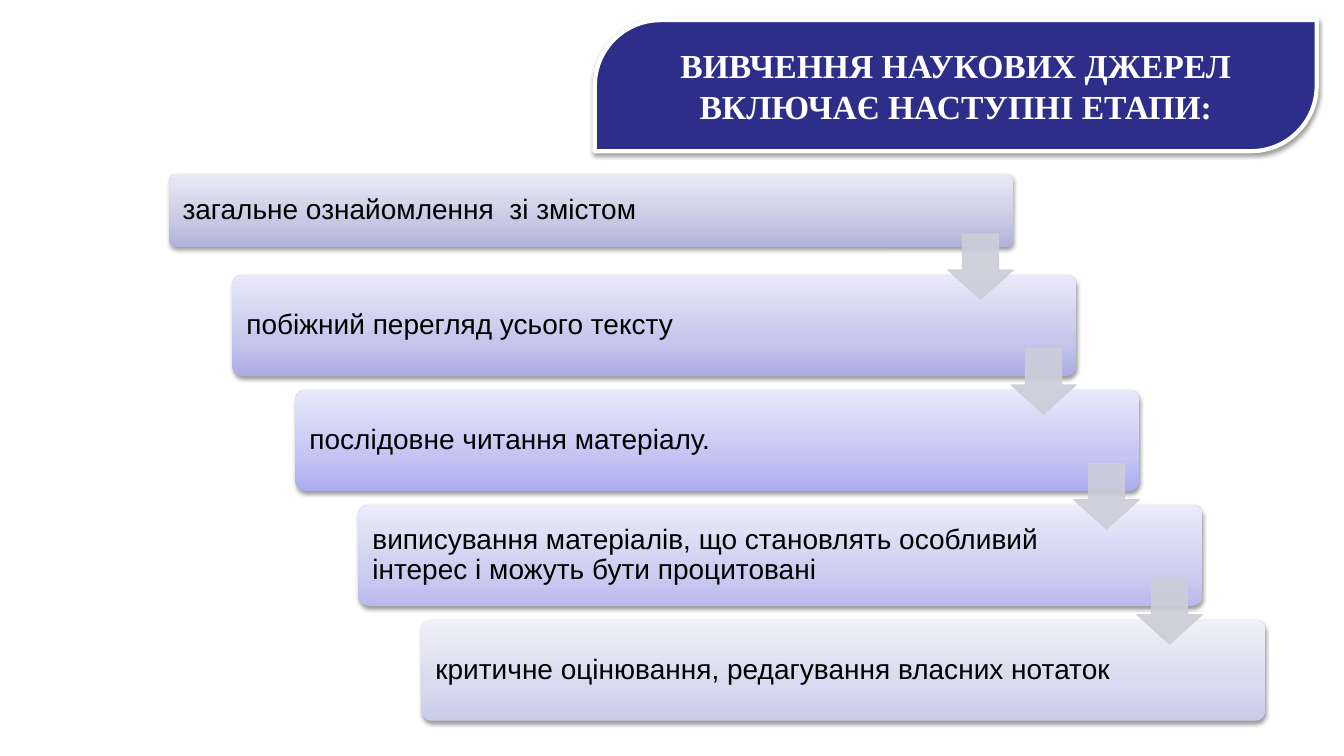
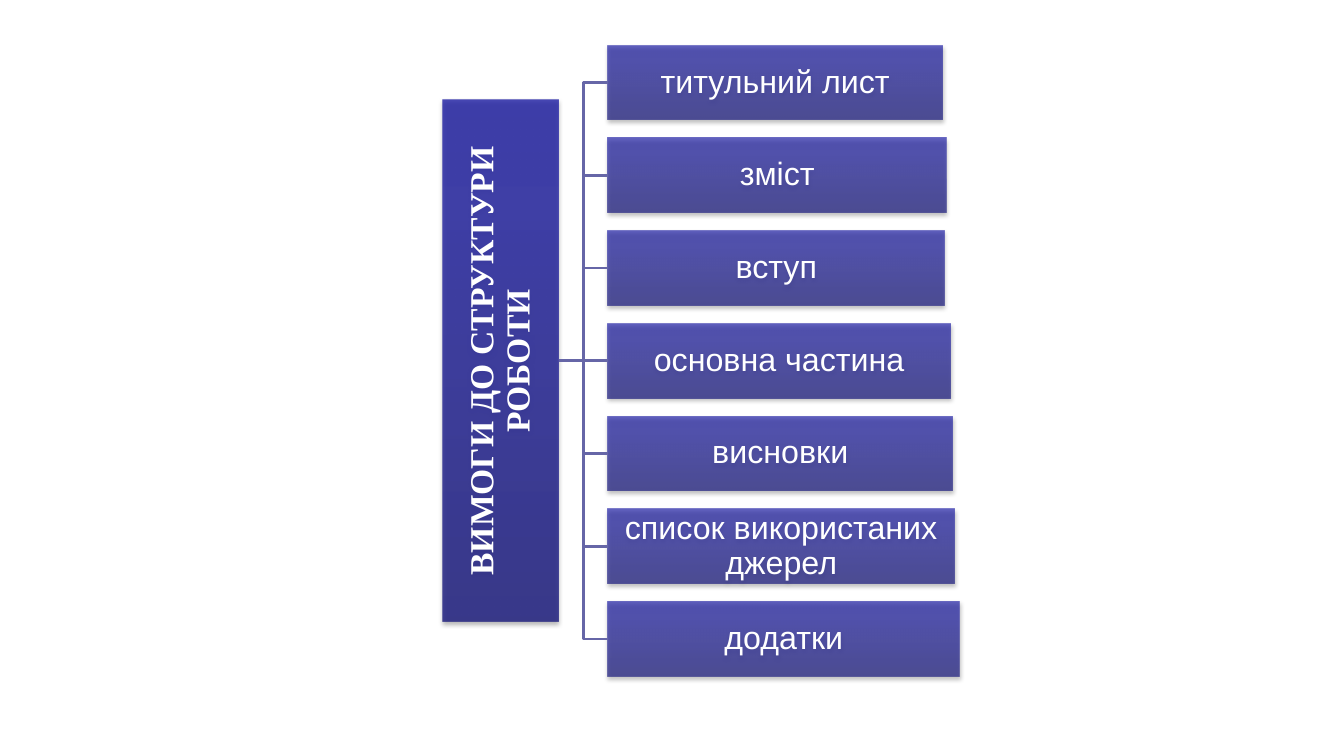
from dataclasses import dataclass

from lxml import etree
from pptx import Presentation
from pptx.dml.color import RGBColor
from pptx.enum.shapes import MSO_CONNECTOR as CONN, MSO_SHAPE as SHAPE
from pptx.enum.text import MSO_ANCHOR as ANCHOR, PP_ALIGN as ALIGN
from pptx.oxml.ns import qn
from pptx.util import Inches, Pt

# Content: step text and its gradient, bottom to top
STEPS_TITLE = "ВИВЧЕННЯ НАУКОВИХ ДЖЕРЕЛ ВКЛЮЧАЄ НАСТУПНІ ЕТАПИ:"
STEPS = [
    ("загальне ознайомлення  зі змістом", ("B0B0DA", "C8C8E4", "EAEAF5")),
    ("побіжний перегляд усього тексту", ("ACACE6", "C6C6EC", "E9E9F9")),
    ("послідовне читання матеріалу.", ("ACACF0", "C5C5F4", "E8E8FB")),
    ("виписування матеріалів, що становлять особливий інтерес "
     "і можуть бути процитовані", ("B9B9ED", "CECEF1", "EBEBFA")),
    ("критичне оцінювання, редагування власних нотаток",
     ("CACAEA", "D9D9EF", "F0F0F9")),
]

# Content: part of the paper and the width of its box
PARTS_TITLE = "ВИМОГИ ДО СТРУКТУРИ РОБОТИ"
PARTS = [
    ("титульний лист", 3.32),
    ("зміст", 3.36),
    ("вступ", 3.34),
    ("основна частина", 3.4),
    ("висновки", 3.42),
    ("список використаних джерел", 3.44),
    ("додатки", 3.49),
]


@dataclass(frozen=True)
class Theme:
    navy: str = "2D2D8A"
    white: str = "FFFFFF"
    black: str = "000000"
    arrow: str = "CDCDDA"
    link: str = "6666A7"
    box: tuple = ("1B1B7E", "2323A3", "2020A6")
    body_font: str = "Arial"
    title_font: str = "Times New Roman"
    title_size: int = 24
    step_size: int = 20
    part_size: int = 23


T = Theme()


# Shared drawing helpers
def sub(parent, tag, **attrs):
    return etree.SubElement(parent, qn(tag), {k: str(v) for k, v in attrs.items()})


def add_box(s, kind, x, y, w, h, adj=()):
    sp = s.shapes.add_shape(kind, Inches(x), Inches(y), Inches(w), Inches(h))
    for i, value in enumerate(adj):
        sp.adjustments[i] = value
    sp.shadow.inherit = False
    sp.line.fill.background()
    return sp


def add_shadow(sp, alpha, dist):
    effects = sp._element.spPr.find(qn("a:effectLst"))
    shadow = sub(effects, "a:outerShdw", blurRad=Pt(3.1), dist=Pt(dist),
                 dir=90 * 60000, rotWithShape=0)
    color = sub(shadow, "a:srgbClr", val=T.black)
    sub(color, "a:alpha", val=alpha * 1000)


def fill_solid(sp, color):
    sp.fill.solid()
    sp.fill.fore_color.rgb = RGBColor.from_string(color)


def fill_gradient(sp, colors, middle, alpha=100):
    sp.fill.gradient()
    sp.fill.gradient_angle = 90
    stops = sp._element.spPr.find(qn("a:gradFill")).find(qn("a:gsLst"))
    for old in list(stops):
        stops.remove(old)
    for pos, color in zip((0, middle, 100), colors):
        stop = sub(stops, "a:gs", pos=pos * 1000)
        clr = sub(stop, "a:srgbClr", val=color)
        if alpha < 100:
            sub(clr, "a:alpha", val=alpha * 1000)


def set_line(shape, color, width):
    shape.line.color.rgb = RGBColor.from_string(color)
    shape.line.width = Pt(width)


def write(sp, text, font, size, color, bold=False, align=ALIGN.CENTER,
          spacing=None, insets=(0.1, 0.05, 0.1, 0.05)):
    tf = sp.text_frame
    tf.word_wrap = True
    tf.vertical_anchor = ANCHOR.MIDDLE
    (tf.margin_left, tf.margin_top,
     tf.margin_right, tf.margin_bottom) = map(Inches, insets)
    p = tf.paragraphs[0]
    p.alignment = align
    if spacing:
        p.line_spacing = spacing
    r = p.add_run()
    r.text = text
    r.font.name, r.font.size, r.font.bold = font, Pt(size), bold
    r.font.color.rgb = RGBColor.from_string(color)


def write_title(sp, text, **layout):
    write(sp, text, T.title_font, T.title_size, T.white, bold=True, **layout)


# Slide 1: staircase of steps
def build_steps(s):
    x0, w, h, first_h = 1.68, 8.37, 1.0, 0.73
    dx, pitch, center0 = 2.5 / (len(STEPS) - 1), 1.14, 2.09
    for i, (text, colors) in enumerate(STEPS):
        height = h if i else first_h
        sp = add_box(s, SHAPE.ROUNDED_RECTANGLE, x0 + i * dx,
                     center0 + i * pitch - height / 2, w, height, (0.1,))
        fill_gradient(sp, colors, 35)
        add_shadow(sp, 38, 1.6)
        write(sp, text, T.body_font, T.step_size, T.black, align=ALIGN.LEFT,
              spacing=0.9, insets=(0.11, 0.08, 1.38, 0.08))

    # Arrows end flush with the right side of the step above
    size, arrow_y = 0.65, 2.32
    for i in range(len(STEPS) - 1):
        sp = add_box(s, SHAPE.DOWN_ARROW, x0 + i * dx + w - size,
                     arrow_y + i * pitch, size, size, (0.55, 0.45))
        fill_solid(sp, T.arrow)
        set_line(sp, T.arrow, 0.75)
        for clr in sp._element.spPr.iter(qn("a:srgbClr")):
            sub(clr, "a:alpha", val=90000)

    banner = add_box(s, SHAPE.ROUND_2_DIAG_RECTANGLE, 5.9, 0.2, 7.16, 1.3, (0.5, 0))
    fill_solid(banner, T.navy)
    set_line(banner, T.white, 3)
    add_shadow(banner, 38, 1.6)
    write_title(banner, STEPS_TITLE)


# Slide 2: tree of parts
def add_tree_box(s, x, y, w, h, alpha):
    sp = add_box(s, SHAPE.RECTANGLE, x, y, w, h)
    fill_gradient(sp, T.box, 80, alpha)
    add_shadow(sp, 35, 1.8)
    return sp


def add_link(s, kind, root, part):
    link = s.shapes.add_connector(kind, 0, 0, 0, 0)
    link.begin_connect(root, 3)
    link.end_connect(part, 1)
    set_line(link, T.link, 2)
    sub(link._element.spPr, "a:effectLst")


def build_parts(s):
    x, y0, h, pitch = 6.03, 0.45, 0.74, 0.92
    root_w, root_h, gap = 1.15, 5.18, 0.49
    middle = len(PARTS) // 2
    layout = dict(spacing=0.9, insets=(0.02,) * 4)

    center = y0 + middle * pitch + h / 2
    root = add_tree_box(s, x - gap - root_w, center - root_h / 2, root_w, root_h, 80)
    write_title(root, PARTS_TITLE, **layout)
    root.text_frame._txBody.bodyPr.set("vert", "vert270")

    for i, (text, w) in enumerate(PARTS):
        part = add_tree_box(s, x, y0 + i * pitch, w, h, 70)
        write(part, text, T.body_font, T.part_size, T.white, **layout)
        add_link(s, CONN.STRAIGHT if i == middle else CONN.ELBOW, root, part)


def main():
    prs = Presentation()
    prs.slide_width, prs.slide_height = Inches(13.33), Inches(7.5)
    for build in (build_steps, build_parts):
        build(prs.slides.add_slide(prs.slide_layouts[6]))
    prs.save("out.pptx")


if __name__ == "__main__":
    main()
